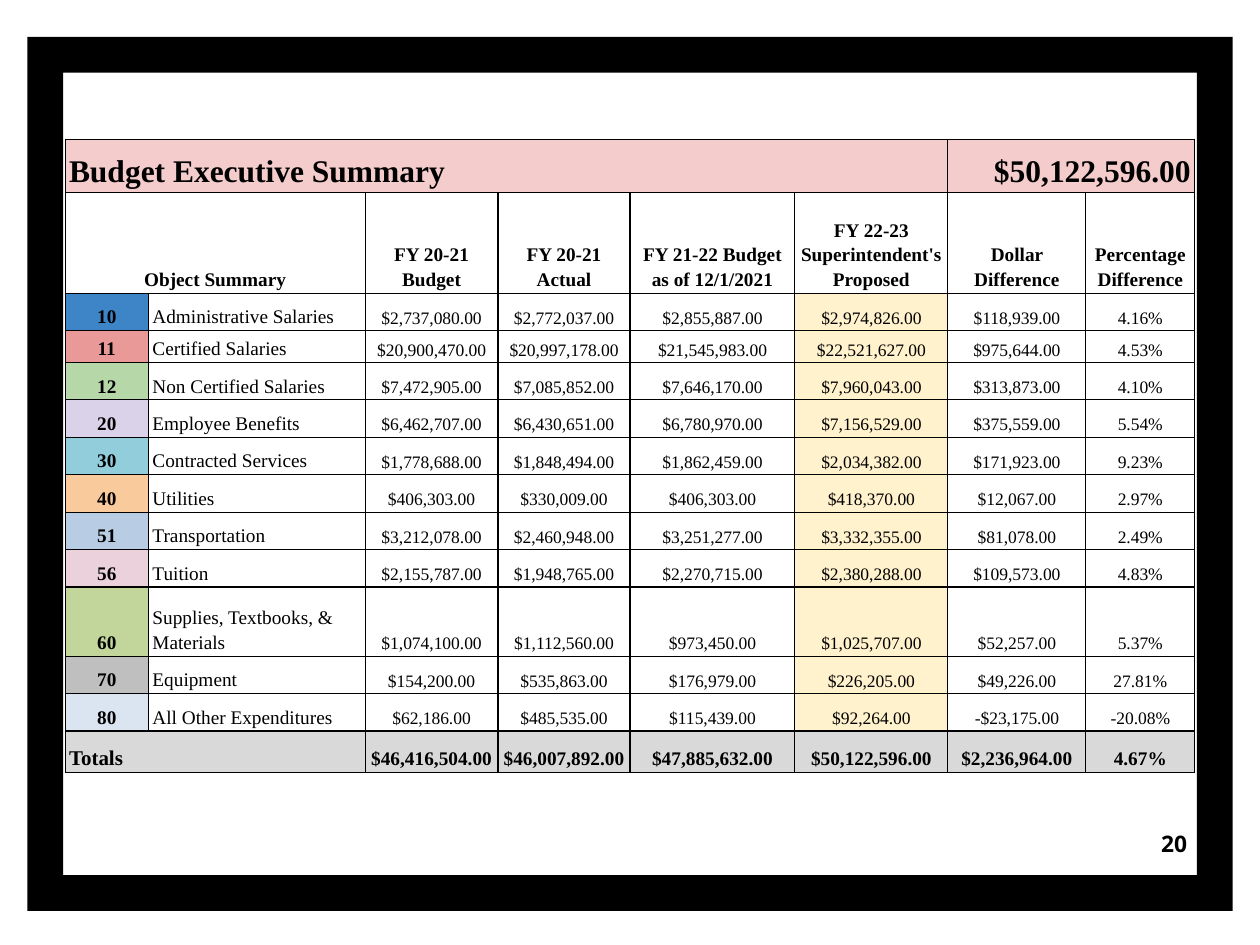
import dataclasses

import lxml.etree
import pptx
import pptx.dml.color
import pptx.enum.shapes
import pptx.enum.text
import pptx.oxml.ns
import pptx.slide
import pptx.table
import pptx.text.text
import pptx.util

Pt = pptx.util.Pt
Align = pptx.enum.text.PP_ALIGN
Anchor = pptx.enum.text.MSO_ANCHOR

COLORS = {
    "black": "000000",
    "title": "F4CCCC",
    "proposed": "FFF2CC",
    "totals": "D9D9D9",
    "administrative": "3D85C6",
    "certified": "EA9999",
    "non_certified": "B6D7A8",
    "benefits": "D9D2E9",
    "contracted": "92CDDC",
    "utilities": "F9CB9C",
    "transportation": "B8CCE4",
    "tuition": "EAD1DC",
    "supplies": "C2D69B",
    "equipment": "BFBFBF",
    "other": "DBE5F1",
}
TABLE_FONT = "Times New Roman"
COLUMN_WIDTHS = (47.7, 123.8, 75.9, 75.5, 94.2, 87.4, 78.9, 62.2)
ROW_HEIGHTS = (30.2, 57.8, 21.4, 18.2, *[21.4] * 6, 39.6, 21.4, 21.4, 23.6)
PROPOSED_COLUMN = 5


@dataclasses.dataclass(frozen=True)
class CellStyle:
    """Look of the text in one kind of cell."""

    size: float
    bold: bool = True
    align: Align = Align.CENTER


@dataclasses.dataclass(frozen=True)
class BudgetLine:
    """One object code with its amounts."""

    code: str
    label: str
    color: str
    amounts: tuple[str, ...]


TITLE = CellStyle(18, align=Align.LEFT)
GRAND_TOTAL = CellStyle(18, align=Align.RIGHT)
HEADING = CellStyle(11)
LABEL = CellStyle(11, bold=False, align=Align.LEFT)
AMOUNT = CellStyle(10, bold=False)
TOTALS_LABEL = CellStyle(12, align=Align.LEFT)

HEADINGS = (
    "FY 20-21 Budget", "FY 20-21 Actual", "FY 21-22 Budget as of 12/1/2021",
    "FY 22-23 Superintendent's Proposed", "Dollar Difference", "Percentage Difference",
)
BUDGET_LINES = (
    BudgetLine("10", "Administrative Salaries", "administrative",
               ("$2,737,080.00", "$2,772,037.00", "$2,855,887.00", "$2,974,826.00", "$118,939.00", "4.16%")),
    BudgetLine("11", "Certified Salaries", "certified",
               ("$20,900,470.00", "$20,997,178.00", "$21,545,983.00", "$22,521,627.00", "$975,644.00", "4.53%")),
    BudgetLine("12", "Non Certified Salaries", "non_certified",
               ("$7,472,905.00", "$7,085,852.00", "$7,646,170.00", "$7,960,043.00", "$313,873.00", "4.10%")),
    BudgetLine("20", "Employee Benefits", "benefits",
               ("$6,462,707.00", "$6,430,651.00", "$6,780,970.00", "$7,156,529.00", "$375,559.00", "5.54%")),
    BudgetLine("30", "Contracted Services", "contracted",
               ("$1,778,688.00", "$1,848,494.00", "$1,862,459.00", "$2,034,382.00", "$171,923.00", "9.23%")),
    BudgetLine("40", "Utilities", "utilities",
               ("$406,303.00", "$330,009.00", "$406,303.00", "$418,370.00", "$12,067.00", "2.97%")),
    BudgetLine("51", "Transportation", "transportation",
               ("$3,212,078.00", "$2,460,948.00", "$3,251,277.00", "$3,332,355.00", "$81,078.00", "2.49%")),
    BudgetLine("56", "Tuition", "tuition",
               ("$2,155,787.00", "$1,948,765.00", "$2,270,715.00", "$2,380,288.00", "$109,573.00", "4.83%")),
    BudgetLine("60", "Supplies, Textbooks, & Materials", "supplies",
               ("$1,074,100.00", "$1,112,560.00", "$973,450.00", "$1,025,707.00", "$52,257.00", "5.37%")),
    BudgetLine("70", "Equipment", "equipment",
               ("$154,200.00", "$535,863.00", "$176,979.00", "$226,205.00", "$49,226.00", "27.81%")),
    BudgetLine("80", "All Other Expenditures", "other",
               ("$62,186.00", "$485,535.00", "$115,439.00", "$92,264.00", "-$23,175.00", "-20.08%")),
)
TOTALS = ("$46,416,504.00", "$46,007,892.00", "$47,885,632.00", "$50,122,596.00", "$2,236,964.00", "4.67%")


def rgb(color: str) -> pptx.dml.color.RGBColor:
    """Return the named colour."""
    return pptx.dml.color.RGBColor.from_string(COLORS[color])


def style_paragraph(paragraph: pptx.text.text._Paragraph, style: CellStyle, font_name: str) -> None:
    """Set the alignment and font of a paragraph."""
    paragraph.alignment = style.align
    paragraph.font.name = font_name
    paragraph.font.size = Pt(style.size)
    paragraph.font.bold = style.bold
    paragraph.font.color.rgb = rgb("black")


def prepare_cell(cell: pptx.table._Cell) -> None:
    """Give a cell its borders, margins and empty fill."""
    properties = cell._tc.get_or_add_tcPr()
    for side in ("a:lnL", "a:lnR", "a:lnT", "a:lnB"):
        border = lxml.etree.SubElement(properties, pptx.oxml.ns.qn(side), w=str(Pt(0.75)))
        fill = lxml.etree.SubElement(border, pptx.oxml.ns.qn("a:solidFill"))
        lxml.etree.SubElement(fill, pptx.oxml.ns.qn("a:srgbClr"), val=COLORS["black"])
    cell.margin_left = cell.margin_right = Pt(2.25)
    cell.margin_top = cell.margin_bottom = Pt(1.5)
    cell.vertical_anchor = Anchor.BOTTOM
    cell.fill.background()


def write_cell(cell: pptx.table._Cell, text: str, style: CellStyle, color: str | None = None) -> None:
    """Write styled text into a cell and fill it if a colour is given."""
    cell.text = text
    paragraph = cell.text_frame.paragraphs[0]
    style_paragraph(paragraph, style, TABLE_FONT)
    paragraph.line_spacing = 1.15
    if color:
        cell.fill.solid()
        cell.fill.fore_color.rgb = rgb(color)


def draw_frame(slide: pptx.slide.Slide) -> None:
    """Draw the black frame around the slide."""
    frame = slide.shapes.add_shape(
        pptx.enum.shapes.MSO_SHAPE.FRAME, Pt(15.6), Pt(21), Pt(688.8), Pt(499.5))
    frame.adjustments[0] = 0.041
    frame.shadow.inherit = False
    frame.fill.solid()
    frame.fill.fore_color.rgb = rgb("black")
    frame.line.fill.background()


def draw_page_number(slide: pptx.slide.Slide) -> None:
    """Write the page number at the lower right."""
    page_number = slide.shapes.add_textbox(Pt(642.2), Pt(461.5), Pt(43.2), Pt(41)).text_frame
    page_number.word_wrap = True
    page_number.vertical_anchor = Anchor.MIDDLE
    page_number.margin_left = page_number.margin_right = Pt(7.2)
    page_number.margin_top = page_number.margin_bottom = Pt(7.2)
    page_number.text = "20"
    style_paragraph(page_number.paragraphs[0], CellStyle(13, align=Align.RIGHT), "Noto Sans")


def draw_budget(slide: pptx.slide.Slide) -> None:
    """Draw the budget summary table."""
    budget = slide.shapes.add_table(
        len(ROW_HEIGHTS), len(COLUMN_WIDTHS), Pt(37.2), Pt(79.6),
        Pt(sum(COLUMN_WIDTHS)), Pt(sum(ROW_HEIGHTS))).table
    budget.first_row = budget.horz_banding = False
    for column, width in zip(budget.columns, COLUMN_WIDTHS):
        column.width = Pt(width)
    for row, height in zip(budget.rows, ROW_HEIGHTS):
        row.height = Pt(height)
    for cell in budget.iter_cells():
        prepare_cell(cell)

    last = len(ROW_HEIGHTS) - 1
    for row, first, end in ((0, 0, 5), (0, 6, 7), (1, 0, 1), (last, 0, 1)):
        budget.cell(row, first).merge(budget.cell(row, end))
    write_cell(budget.cell(0, 0), "Budget Executive Summary", TITLE, "title")
    write_cell(budget.cell(0, 6), "$50,122,596.00", GRAND_TOTAL, "title")
    write_cell(budget.cell(1, 0), "Object Summary", HEADING)
    write_cell(budget.cell(last, 0), "Totals", TOTALS_LABEL, "totals")
    for column, (heading, total) in enumerate(zip(HEADINGS, TOTALS), 2):
        write_cell(budget.cell(1, column), heading, HEADING)
        write_cell(budget.cell(last, column), total, HEADING, "totals")
    for row, line in enumerate(BUDGET_LINES, 2):
        write_cell(budget.cell(row, 0), line.code, HEADING, line.color)
        write_cell(budget.cell(row, 1), line.label, LABEL)
        for column, amount in enumerate(line.amounts, 2):
            color = "proposed" if column == PROPOSED_COLUMN else None
            write_cell(budget.cell(row, column), amount, AMOUNT, color)


def main() -> None:
    """Build and save the slide."""
    presentation = pptx.Presentation()
    presentation.slide_width, presentation.slide_height = Pt(720), Pt(540)
    slide = presentation.slides.add_slide(presentation.slide_layouts[6])
    draw_frame(slide)
    draw_page_number(slide)
    draw_budget(slide)
    presentation.save("out.pptx")


if __name__ == "__main__":
    main()
